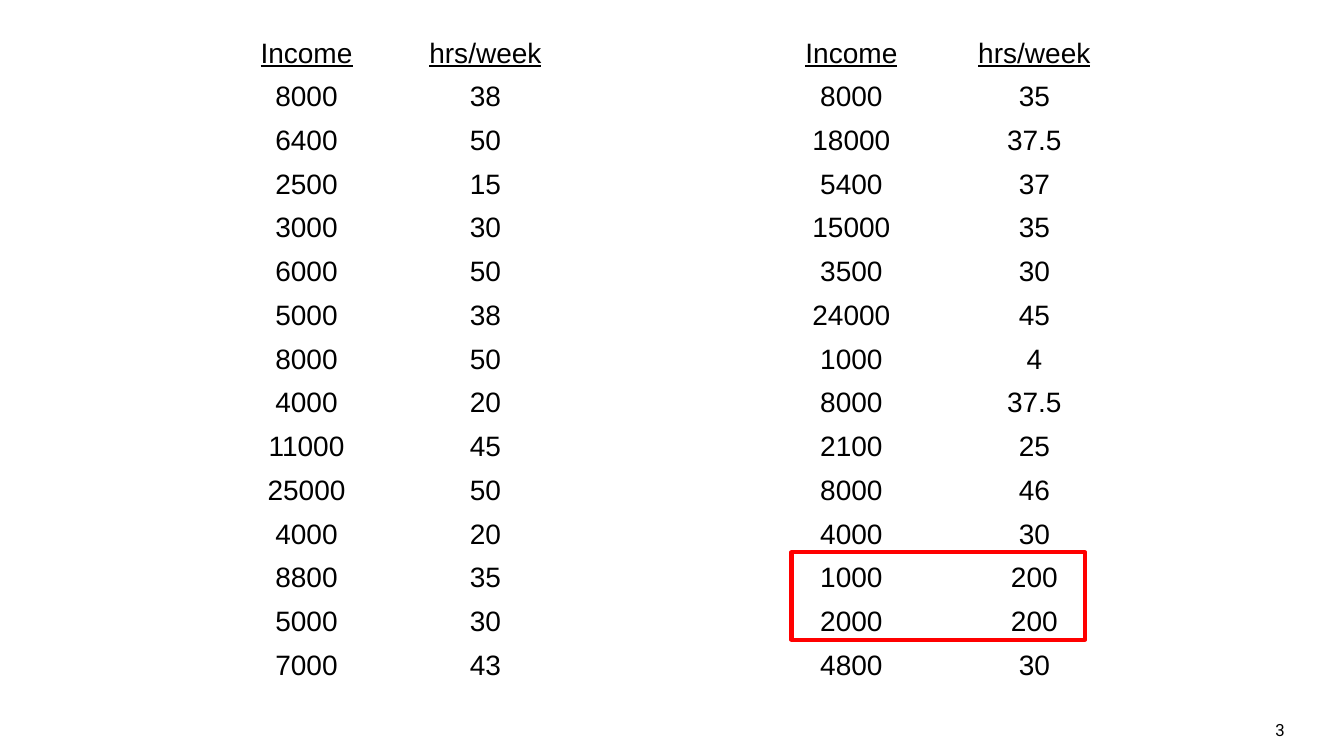
from dataclasses import dataclass

from pptx import Presentation
from pptx.dml.color import RGBColor
from pptx.enum.shapes import MSO_SHAPE
from pptx.enum.text import MSO_ANCHOR, PP_ALIGN
from pptx.util import Inches, Pt

HEADINGS = ("Income", "hrs/week")
LEFT_SAMPLE = [
    ("8000", "38"), ("6400", "50"), ("2500", "15"), ("3000", "30"),
    ("6000", "50"), ("5000", "38"), ("8000", "50"), ("4000", "20"),
    ("11000", "45"), ("25000", "50"), ("4000", "20"), ("8800", "35"),
    ("5000", "30"), ("7000", "43"),
]
RIGHT_SAMPLE = [
    ("8000", "35"), ("18000", "37.5"), ("5400", "37"), ("15000", "35"),
    ("3500", "30"), ("24000", "45"), ("1000", "4"), ("8000", "37.5"),
    ("2100", "25"), ("8000", "46"), ("4000", "30"), ("1000", "200"),
    ("2000", "200"), ("4800", "30"),
]
OUTLIER_ROWS = (12, 13)
PAGE_NUMBER = "3"


@dataclass(frozen=True)
class Theme:
    text: RGBColor = RGBColor(0, 0, 0)
    outlier: RGBColor = RGBColor(0xFF, 0, 0)
    table_font: str = "Arial"
    number_font: str = "Roboto"
    table_size: Pt = Pt(20)
    number_size: Pt = Pt(12)
    outlier_line: Pt = Pt(3)


THEME = Theme()
TABLE_LEFT, TABLE_TOP, TABLE_HEIGHT = 2.17, 0.3, 6.5
COLUMN_WIDTHS = (1.74, 1.81, 1.82, 1.81, 1.82)


def style(paragraph, font_name, size, align):
    paragraph.alignment = align
    paragraph.font.name = font_name
    paragraph.font.size = size
    paragraph.font.color.rgb = THEME.text


def add_samples(slide, rows, row_height):
    frame = slide.shapes.add_table(
        len(rows), len(COLUMN_WIDTHS), Inches(TABLE_LEFT), Inches(TABLE_TOP),
        Inches(sum(COLUMN_WIDTHS)), Inches(TABLE_HEIGHT))
    samples = frame.table
    samples.first_row = samples.horz_banding = False
    for column, width in zip(samples.columns, COLUMN_WIDTHS):
        column.width = Inches(width)
    for r, values in enumerate(rows):
        samples.rows[r].height = Inches(row_height)
        for c, value in enumerate(values):
            cell = samples.cell(r, c)
            cell.fill.background()
            cell.vertical_anchor = MSO_ANCHOR.BOTTOM
            cell.text = value
            entry = cell.text_frame.paragraphs[0]
            style(entry, THEME.table_font, THEME.table_size, PP_ALIGN.CENTER)
            if r == 0:
                entry.font.underline = True


def add_outlier_box(slide, row_height):
    first, last = OUTLIER_ROWS
    top = TABLE_TOP + first * row_height - 0.02
    height = (last - first + 1) * row_height
    box = slide.shapes.add_shape(
        MSO_SHAPE.RECTANGLE, Inches(7.85), Inches(top), Inches(2.91), Inches(height))
    box.shadow.inherit = False
    box.fill.background()
    box.line.color.rgb = THEME.outlier
    box.line.width = THEME.outlier_line


def add_page_number(slide):
    number = slide.shapes.add_textbox(
        Inches(7.62), Inches(7.09), Inches(5.22), Inches(0.3)).text_frame
    number.word_wrap = True
    number.text = PAGE_NUMBER
    style(number.paragraphs[0], THEME.number_font, THEME.number_size, PP_ALIGN.RIGHT)


def main():
    deck = Presentation()
    deck.slide_width, deck.slide_height = Inches(13.33), Inches(7.5)
    slide = deck.slides.add_slide(deck.slide_layouts.get_by_name("Blank"))
    rows = [(*HEADINGS, "", *HEADINGS)]
    rows += [(*left, "", *right) for left, right in zip(LEFT_SAMPLE, RIGHT_SAMPLE)]
    row_height = TABLE_HEIGHT / len(rows)
    add_page_number(slide)
    add_samples(slide, rows, row_height)
    add_outlier_box(slide, row_height)
    deck.save("out.pptx")


if __name__ == "__main__":
    main()
